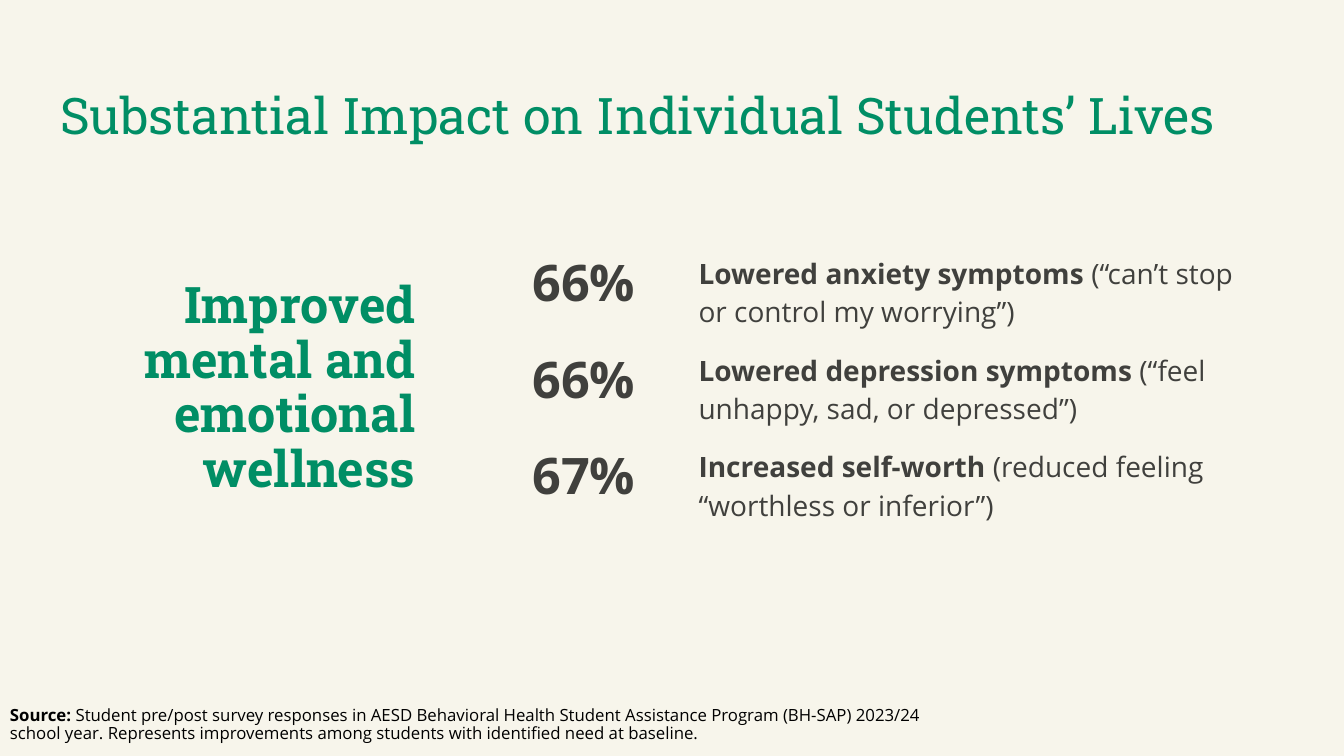
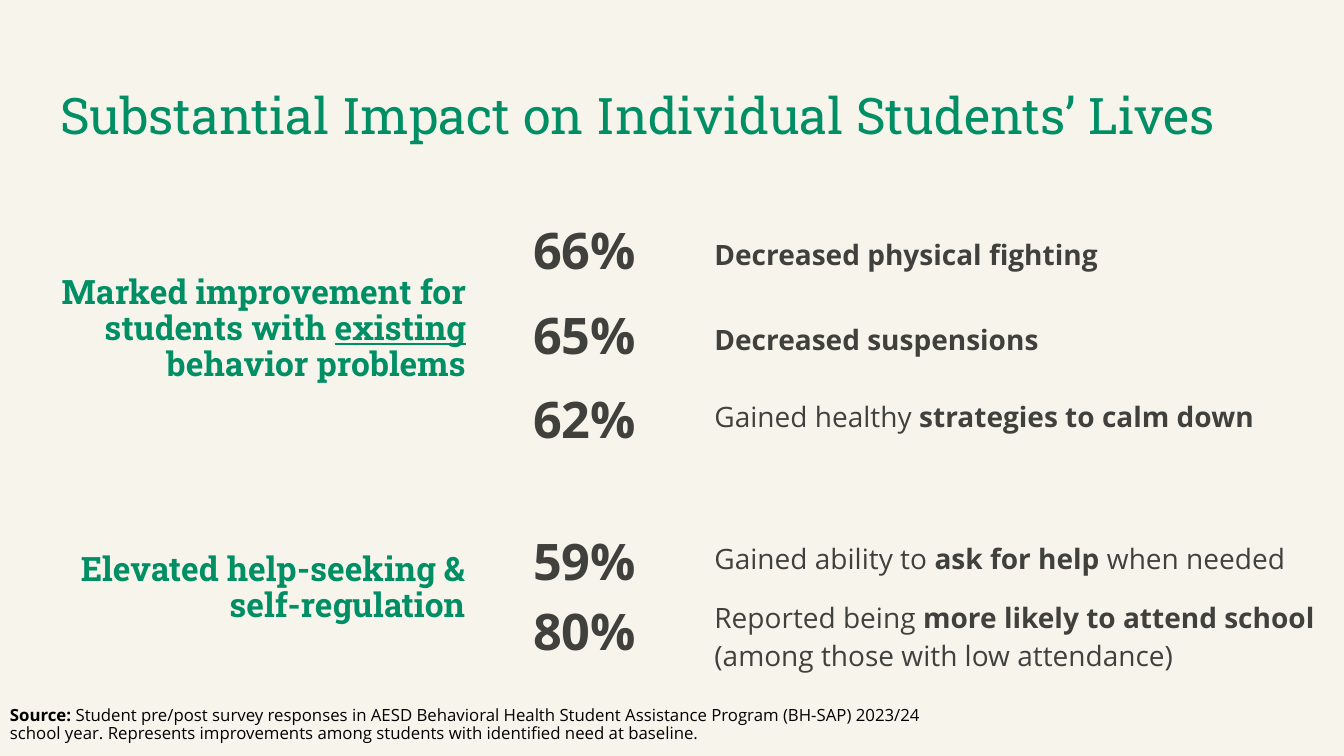
from dataclasses import dataclass

from pptx import Presentation
from pptx.dml.color import RGBColor
from pptx.enum import text
from pptx.util import Cm, Pt


@dataclass(frozen=True)
class Theme:
    back: str = "F7F5EB"
    green: str = "008E65"
    dark: str = "40403D"
    black: str = "000000"
    head: str = "Roboto Slab"
    body: str = "Open Sans"
    big: int = 36
    mid: int = 24
    base: int = 20
    small: int = 12


TITLE = "Substantial Impact on Individual Students’ Lives"
SOURCE = (
    "*Source:* Student pre/post survey responses in AESD Behavioral Health "
    "Student Assistance Program (BH-SAP) 2023/24 school year. Represents "
    "improvements among students with identified need at baseline."
)
PLAIN_GRID = "{2D5ABB26-0587-4C30-8999-92F81FD0307C}"
WIDE, HIGH = 33.87, 19.05


class Deck:
    def __init__(self, theme):
        self.theme = theme
        self.prs = Presentation()
        self.prs.slide_width = Cm(WIDE)
        self.prs.slide_height = Cm(HIGH)
        self.slide = None

    def page(self):
        """Start a slide with the shared background, title and source line."""
        t = self.theme
        self.slide = self.prs.slides.add_slide(self.prs.slide_layouts[6])
        fill = self.slide.background.fill
        fill.solid()
        fill.fore_color.rgb = RGBColor.from_string(t.back)
        frame = self.box(0, 0, WIDE, 3.8, text.MSO_ANCHOR.BOTTOM)
        frame.margin_left = Cm(1.52)
        self.put(frame, TITLE, t.big, t.green, t.head, space=0.9)
        frame = self.box(0, 17.7, 23.6, 1.27, text.MSO_ANCHOR.TOP)
        self.put(frame, SOURCE, t.small, t.black, t.body, space=0.88)

    def box(self, left, top, width, height, anchor):
        area = [Cm(n) for n in (left, top, width, height)]
        frame = self.slide.shapes.add_textbox(*area).text_frame
        frame.word_wrap = True
        frame.vertical_anchor = anchor
        return frame

    def put(self, frame, words, size, color, face, bold=False, space=None):
        """Fill a frame; *starred* words are bold, or underlined in bold text."""
        para = frame.paragraphs[0]
        para.line_spacing = space
        for i, part in enumerate(words.split("*")):
            if not part:
                continue
            run = para.add_run()
            run.text = part
            mark = i % 2 == 1
            font = run.font
            font.name, font.size = face, Pt(size)
            font.color.rgb = RGBColor.from_string(color)
            font.bold = bold or mark
            if bold and mark:
                font.underline = True
        return para

    def label(self, words, size, *area):
        frame = self.box(*area, text.MSO_ANCHOR.MIDDLE)
        t = self.theme
        para = self.put(frame, words, size, t.green, t.head, True, 0.9)
        para.alignment = text.PP_ALIGN.RIGHT

    def stats(self, left, top, cols, rows):
        """Add a table of (height, share, finding) rows; empty rows are gaps."""
        t = self.theme
        tall = sum(row[0] for row in rows)
        table = self.slide.shapes.add_table(
            len(rows), 2, Cm(left), Cm(top), Cm(sum(cols)), Cm(tall)).table
        table.first_row = table.horz_banding = False
        table._tbl.tblPr[0].text = PLAIN_GRID
        for col, width in zip(table.columns, cols):
            col.width = Cm(width)
        for line, (height, share, note) in zip(table.rows, rows):
            line.height = Cm(height)
            first, last = line.cells
            for cell in (first, last):
                cell.fill.background()
            first.margin_top, first.margin_bottom = Cm(0.08), 0
            last.vertical_anchor = text.MSO_ANCHOR.MIDDLE
            self.put(first.text_frame, share, t.big, t.dark, t.body, True)
            self.put(last.text_frame, note, t.base, t.dark, t.body)


def main():
    theme = Theme()
    deck = Deck(theme)

    deck.page()
    deck.stats(13.16, 6.15, (4.19, 14.73), [
        (2.44, "66%", "*Lowered anxiety symptoms *(“can’t stop or control my worrying”)"),
        (2.44, "66%", "*Lowered depression symptoms* (“feel unhappy, sad, or depressed”)"),
        (2.44, "67%", "*Increased self-worth *(reduced feeling “worthless or inferior”)"),
    ])
    deck.label("Improved mental and emotional wellness", theme.big,
               1.78, 7.65, 8.94, 4.32)

    deck.page()
    deck.stats(13.18, 5.36, (4.57, 16.1), [
        (2.13, "66%", "*Decreased physical fighting*"),
        (2.13, "65%", "*Decreased suspensions*"),
        (1.78, "62%", "Gained healthy *strategies to calm down*"),
        (1.78, "", ""),
        (1.78, "59%", "Gained ability to *ask for help *when needed"),
        (2.18, "80%", "Reported being *more likely to attend school* "
                      "(among those with low attendance)"),
        (1.57, "", ""),
    ])
    deck.label("Marked improvement for students with *existing* behavior problems",
               theme.mid, 0.51, 6.91, 11.48, 2.79)
    deck.label("Elevated help-seeking & self-regulation", theme.mid,
               1.35, 13.44, 10.62, 2.79)

    deck.prs.save("out.pptx")


if __name__ == "__main__":
    main()
